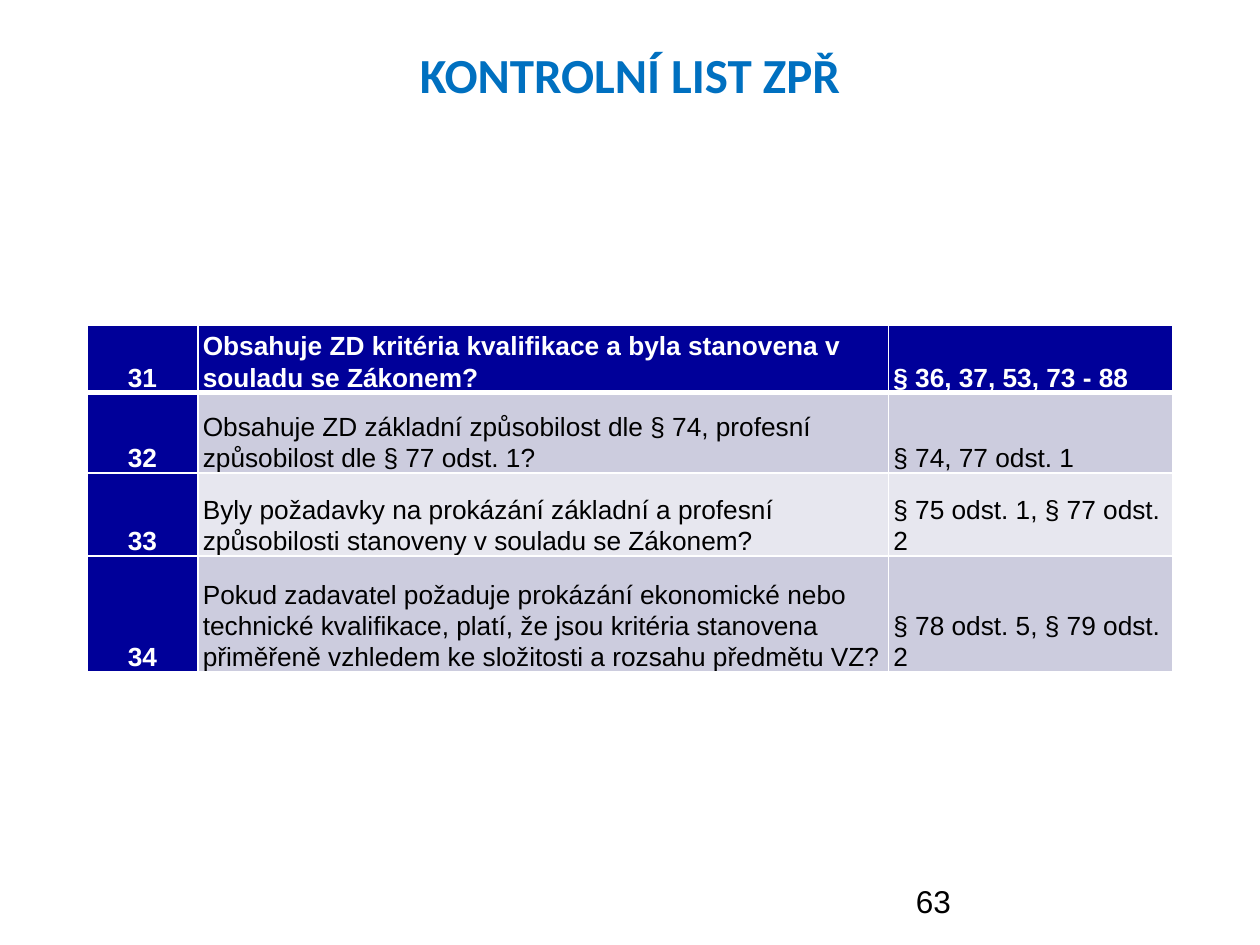
from dataclasses import dataclass

from lxml import etree
from pptx import Presentation
from pptx.dml.color import RGBColor
from pptx.enum.text import MSO_ANCHOR, PP_ALIGN
from pptx.oxml.ns import qn
from pptx.util import Inches, Pt

LEFT, CENTER = PP_ALIGN.LEFT, PP_ALIGN.CENTER
TOP, BOTTOM = MSO_ANCHOR.TOP, MSO_ANCHOR.BOTTOM

# Content
TITLE = "KONTROLNÍ LIST ZPŘ"
PAGE = "63"
ROWS = [
    ("31", "Obsahuje ZD kritéria kvalifikace a byla stanovena v souladu se Zákonem?",
     "§ 36, 37, 53, 73 - 88"),
    ("32", "Obsahuje ZD základní způsobilost dle § 74, profesní způsobilost dle § 77 odst. 1?",
     "§ 74, 77 odst. 1"),
    ("33", "Byly požadavky na prokázání základní a profesní způsobilosti stanoveny "
           "v souladu se Zákonem?",
     "§ 75 odst. 1, § 77 odst. 2"),
    ("34", "Pokud zadavatel požaduje prokázání ekonomické nebo technické kvalifikace, "
           "platí, že jsou kritéria stanovena přiměřeně vzhledem ke složitosti "
           "a rozsahu předmětu VZ?",
     "§ 78 odst. 5, § 79 odst. 2"),
]


@dataclass(frozen=True)
class Theme:
    title: str = "0070C0"
    header: str = "000099"
    bands: tuple = ("E7E7EF", "CCCCDE")
    light: str = "FFFFFF"
    dark: str = "000000"
    title_font: str = "Calibri"
    body_font: str = "Arial"
    title_size: int = 28
    cell_size: int = 15
    page_size: int = 18
    thin: int = 1
    thick: int = 3


T = Theme()

# Layout in inches
SLIDE_W, SLIDE_H = 10, 7.5
MARGIN = 0.05 * SLIDE_W
TITLE_BOX = (MARGIN, 0.04 * SLIDE_H, SLIDE_W - 2 * MARGIN, SLIDE_H / 6)
PAGE_W = 2.33
PAGE_BOX = (SLIDE_W - MARGIN - PAGE_W, 6.95, PAGE_W, 0.4)
COLS = (0.88, 5.48, 2.26)
HEIGHTS = (0.52, 0.64, 0.66, 0.92)
TABLE_BOX = ((SLIDE_W - sum(COLS)) / 2, 2.58, sum(COLS), sum(HEIGHTS))


def write(tf, text, *, size, color, font=T.body_font, bold=False, align=LEFT, spacing=None):
    p = tf.paragraphs[0]
    p.alignment = align
    if spacing:
        p.line_spacing = spacing
    r = p.add_run()
    r.text = text
    r.font.name, r.font.size, r.font.bold = font, Pt(size), bold
    r.font.color.rgb = RGBColor.from_string(color)


def add_text(s, box, text, **fmt):
    tf = s.shapes.add_textbox(*map(Inches, box)).text_frame
    tf.word_wrap = True
    tf.vertical_anchor = TOP
    write(tf, text, **fmt)


def set_borders(cell, **widths):
    tcPr = cell._tc.get_or_add_tcPr()
    for side in "LRTB":
        ln = etree.SubElement(tcPr, qn(f"a:ln{side}"), w=str(Pt(widths.get(side, T.thin))))
        fill = etree.SubElement(ln, qn("a:solidFill"))
        etree.SubElement(fill, qn("a:srgbClr"), val=T.light)


def add_checklist(s):
    table = s.shapes.add_table(len(ROWS), len(COLS), *map(Inches, TABLE_BOX)).table
    for column, width in zip(table.columns, COLS):
        column.width = Inches(width)
    for i, (row, height) in enumerate(zip(ROWS, HEIGHTS)):
        table.rows[i].height = Inches(height)
        for j, text in enumerate(row):
            cell = table.cell(i, j)
            strong = i == 0 or j == 0  # header row and number column
            cell.margin_left = cell.margin_right = Inches(0.04)
            cell.margin_top = cell.margin_bottom = 0
            cell.vertical_anchor = BOTTOM
            # The thick rule separates the header from the body
            set_borders(cell, **{0: {"B": T.thick}, 1: {"T": T.thick}}.get(i, {}))
            cell.fill.solid()
            cell.fill.fore_color.rgb = RGBColor.from_string(
                T.header if strong else T.bands[i % 2])
            write(cell.text_frame, text, size=T.cell_size, bold=strong,
                  color=T.light if strong else T.dark,
                  align=CENTER if j == 0 else LEFT, spacing=1.07)


def main():
    prs = Presentation()
    prs.slide_width, prs.slide_height = Inches(SLIDE_W), Inches(SLIDE_H)
    s = prs.slides.add_slide(prs.slide_layouts[6])
    add_text(s, TITLE_BOX, TITLE, size=T.title_size, color=T.title,
             font=T.title_font, bold=True, align=CENTER)
    add_checklist(s)
    add_text(s, PAGE_BOX, PAGE, size=T.page_size, color=T.dark)
    prs.save("out.pptx")


if __name__ == "__main__":
    main()
